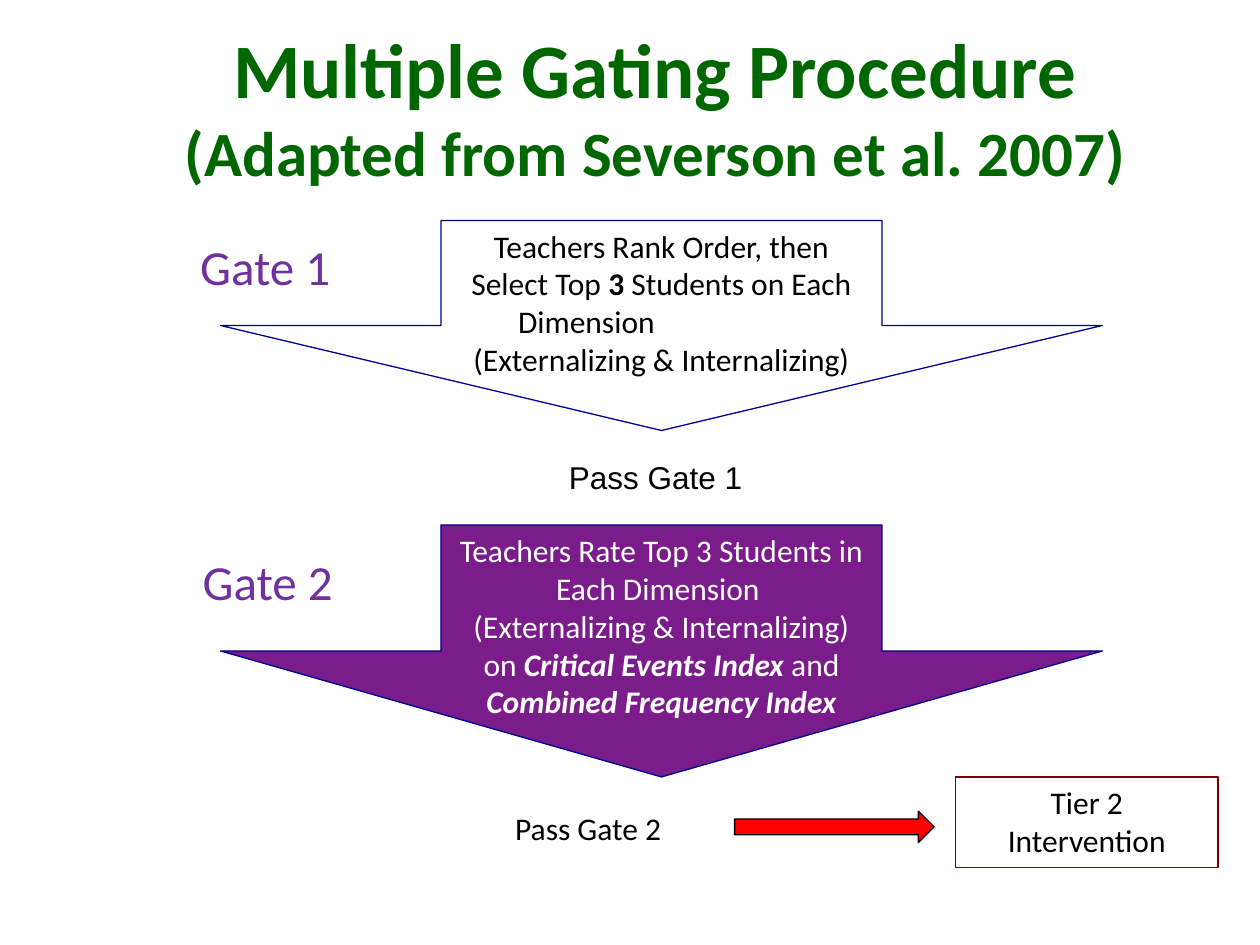
from dataclasses import dataclass

from pptx import Presentation
from pptx.dml.color import RGBColor
from pptx.enum.shapes import MSO_SHAPE
from pptx.enum.text import MSO_ANCHOR, MSO_AUTO_SIZE, PP_ALIGN
from pptx.util import Pt


@dataclass(frozen=True)
class Theme:
    """Colours, fonts and type sizes of the slide."""
    heading: str = "006600"
    gate: str = "7030A0"
    rating: str = "7A1C8A"
    navy: str = "000090"
    maroon: str = "800000"
    red: str = "FF0000"
    black: str = "000000"
    white: str = "FFFFFF"
    font: str = "Calibri"
    pass_font: str = "Arial"
    title: int = 44
    subtitle: int = 36
    label: int = 28
    body: int = 18


THEME = Theme()


def write(frame, paragraphs, size=THEME.body, color=THEME.black, font=THEME.font,
          align=PP_ALIGN.CENTER, wrap=True, fit=MSO_AUTO_SIZE.SHAPE_TO_FIT_TEXT):
    """Fill a frame with paragraphs, each a list of (text, style) runs."""
    frame.word_wrap = wrap
    frame.auto_size = fit
    frame.vertical_anchor = MSO_ANCHOR.TOP
    for index, runs in enumerate(paragraphs):
        paragraph = frame.add_paragraph() if index else frame.paragraphs[0]
        paragraph.alignment = align
        paragraph.font.size = Pt(size)
        paragraph.font.name = font
        paragraph.font.color.rgb = RGBColor.from_string(color)
        for text, style in runs:
            run = paragraph.add_run()
            run.text = text
            if "b" in style:
                run.font.bold = True
            if "i" in style:
                run.font.italic = True


def add_text(slide, box, paragraphs, **style):
    """Add a text box and return its frame."""
    frame = slide.shapes.add_textbox(*map(Pt, box)).text_frame
    write(frame, paragraphs, **style)
    return frame


def add_block(slide, kind, box, line, fill=None, width=0.75):
    """Add an outlined preset shape with an optional fill."""
    block = slide.shapes.add_shape(kind, *map(Pt, box))
    block.shadow.inherit = False
    if fill:
        block.fill.solid()
        block.fill.fore_color.rgb = RGBColor.from_string(fill)
    else:
        block.fill.background()
    block.line.color.rgb = RGBColor.from_string(line)
    block.line.width = Pt(width)
    return block


def add_heading(slide, box):
    """Place and format the title placeholder."""
    title = slide.shapes.title
    title.left, title.top, title.width, title.height = map(Pt, box)
    write(title.text_frame, [[("Multiple Gating Procedure", "b")],
                             [("(Adapted from Severson et al. 2007)", "b")]],
          THEME.title, THEME.heading, fit=MSO_AUTO_SIZE.NONE)
    title.text_frame.paragraphs[1].font.size = Pt(THEME.subtitle)


def add_gate(slide, box, name, name_offset, fill=None):
    """Draw a gate's down arrow with its name at the left."""
    left, top, width, height = box
    dx, dy = name_offset
    arrow = add_block(slide, MSO_SHAPE.DOWN_ARROW, box, THEME.navy, fill)
    add_text(slide, (left + dx, top + dy, 116.6, 41), [[(name, "")]],
             size=THEME.label, color=THEME.gate, align=PP_ALIGN.LEFT)
    return arrow


def add_ranking_gate(slide, box):
    """Draw gate 1, where teachers rank students."""
    left, top, width, height = box
    add_gate(slide, box, "Gate 1", (-18.7, 5.8))
    frame = add_text(slide, (left + width / 4, top, width / 2, 93.6), [
        [("Teachers Rank Order, then Select Top ", ""), ("3 ", "b"),
         ("Students on Each", "")],
        [("Dimension", "")],
        [("(Externalizing & Internalizing)", "")]])
    dimension = frame.paragraphs[1]
    dimension.alignment = PP_ALIGN.LEFT
    dimension._p.get_or_add_pPr().set("marL", str(Pt(37)))


def add_rating_gate(slide, box):
    """Draw gate 2, where teachers rate students."""
    arrow = add_gate(slide, box, "Gate 2", (-17.3, 11.5), THEME.rating)
    write(arrow.text_frame, [
        [("Teachers Rate Top 3 Students in Each Dimension ", "")],
        [("(Externalizing & Internalizing) on ", ""), ("Critical Events Index", "bi"),
         (" and ", ""), ("Combined Frequency Index", "bi")]],
        color=THEME.white, fit=MSO_AUTO_SIZE.NONE)


def add_outcome(slide, box):
    """Draw the step from passing gate 2 to the tier 2 intervention."""
    left, top, width, height = box
    add_text(slide, (left, top + 15, 98.6, 29), [[("Pass Gate 2", "")]],
             align=PP_ALIGN.LEFT, wrap=False)
    add_block(slide, MSO_SHAPE.RIGHT_ARROW, (left + 132.5, top + 19.5, 114, 18),
              THEME.black, THEME.red)
    tier = add_block(slide, MSO_SHAPE.RECTANGLE, (left + width - 150, top, 150, height),
                     THEME.maroon, width=1)
    write(tier.text_frame, [[("Tier 2", "")], [("Intervention", "")]])


def main():
    """Build and save the slide."""
    deck = Presentation()
    deck.slide_width, deck.slide_height = Pt(720), Pt(540)
    slide = deck.slides.add_slide(deck.slide_layouts[5])
    add_heading(slide, (67.7, 8.6, 613.4, 120.2))
    add_ranking_gate(slide, (126, 126, 504, 120))
    add_text(slide, (318, 258, 113.8, 29), [[("Pass Gate 1", "")]],
             font=THEME.pass_font, align=PP_ALIGN.LEFT, wrap=False)
    add_rating_gate(slide, (126, 300, 504, 144))
    add_outcome(slide, (287.3, 444, 408.7, 51.8))
    deck.save("out.pptx")


if __name__ == "__main__":
    main()
